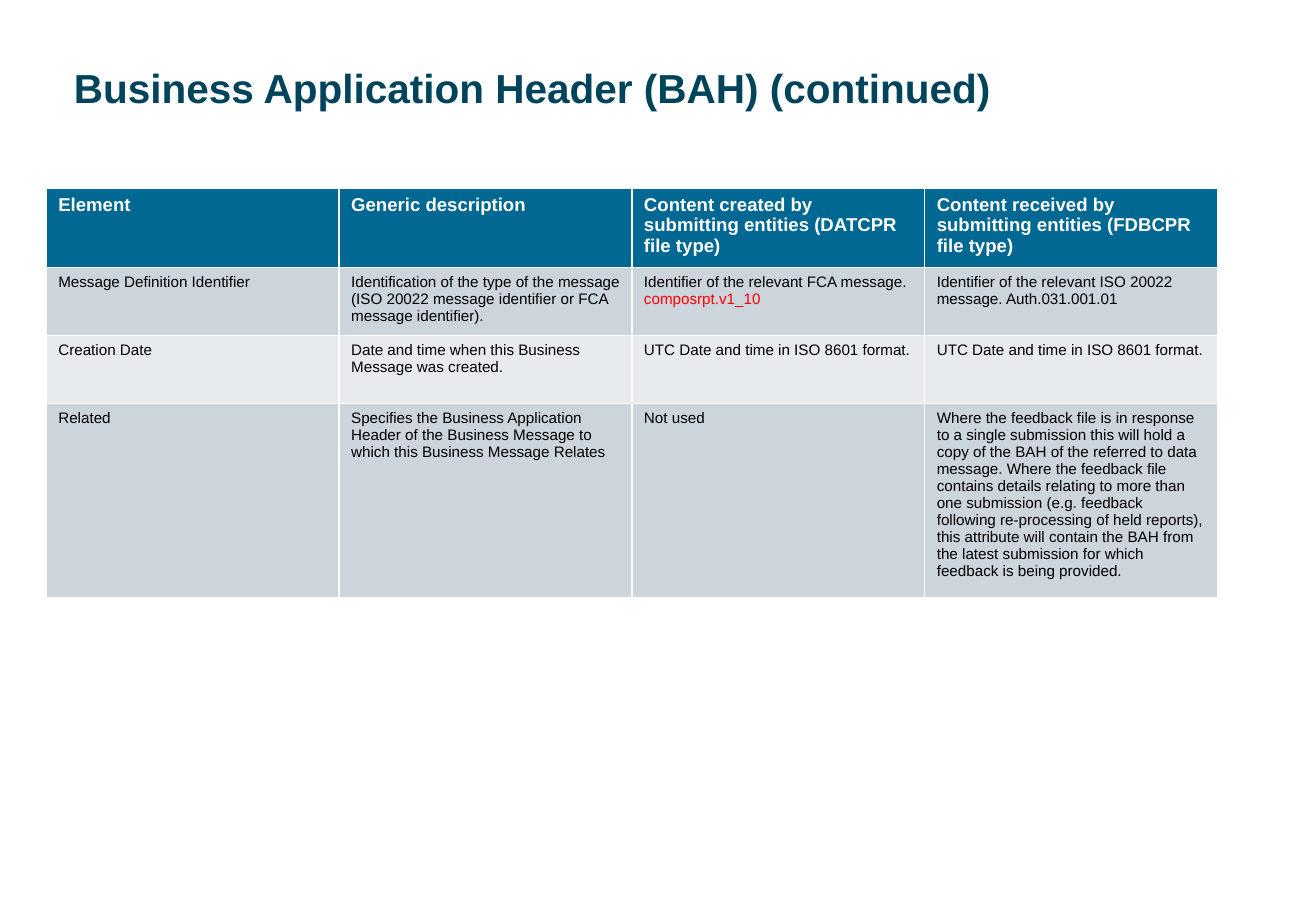
from pptx import Presentation
from pptx.dml.color import RGBColor
from pptx.util import Inches, Pt


def color(value):
    return RGBColor.from_string(value)


def style(run, size, value, bold=False):
    run.font.name = "Arial"
    run.font.size = Pt(size)
    run.font.bold = bold
    run.font.color.rgb = color(value)


presentation = Presentation()
presentation.slide_width = Inches(10.83)
presentation.slide_height = Inches(7.5)
slide = presentation.slides.add_slide(presentation.slide_layouts[6])

title = slide.shapes.add_textbox(Inches(0.51), Inches(0.44), Inches(9.75), Inches(0.69))
title.text_frame.word_wrap = True
title.text_frame.margin_top = Inches(0.08)
title.text_frame.text = "Business Application Header (BAH) (continued)"
style(title.text_frame.paragraphs[0].runs[0], 24, "00445C", True)

message_identifier = "composrpt.v1_10"
rows = [
    [
        "Element",
        "Generic description",
        "Content created by submitting entities (DATCPR file type)",
        "Content received by submitting entities (FDBCPR file type)",
    ],
    [
        "Message Definition Identifier",
        "Identification of the type of the message (ISO 20022 message identifier or FCA message identifier).",
        "Identifier of the relevant FCA message. ",
        "Identifier of the relevant ISO 20022 message. Auth.031.001.01",
    ],
    [
        "Creation Date",
        "Date and time when this Business Message was created.",
        "UTC Date and time in ISO 8601 format.",
        "UTC Date and time in ISO 8601 format.",
    ],
    [
        "Related",
        "Specifies the Business Application Header of the Business Message to which this Business Message Relates",
        "Not used",
        "Where the feedback file is in response to a single submission this will hold a copy of the BAH "
        "of the referred to data message. Where the feedback file contains details relating to more than "
        "one submission (e.g. feedback following re-processing of held reports), this attribute will "
        "contain the BAH from the latest submission for which feedback is being provided.",
    ],
]
row_fills = ["006892", "CCD4DC", "E7EBEE", "CCD4DC"]

table = slide.shapes.add_table(
    len(rows), len(rows[0]), Inches(0.38), Inches(1.55), Inches(9.64), Inches(2.24)
).table
for row_index, (texts, fill) in enumerate(zip(rows, row_fills)):
    for column_index, text in enumerate(texts):
        cell = table.cell(row_index, column_index)
        cell.fill.solid()
        cell.fill.fore_color.rgb = color(fill)
        cell.text_frame.text = text
        run = cell.text_frame.paragraphs[0].runs[0]
        if row_index == 0:
            style(run, 11, "FFFFFF", True)
        else:
            style(run, 9, "000000")

identifier_run = table.cell(1, 2).text_frame.paragraphs[0].add_run()
identifier_run.text = message_identifier
style(identifier_run, 9, "FF0000")

presentation.save("out.pptx")
